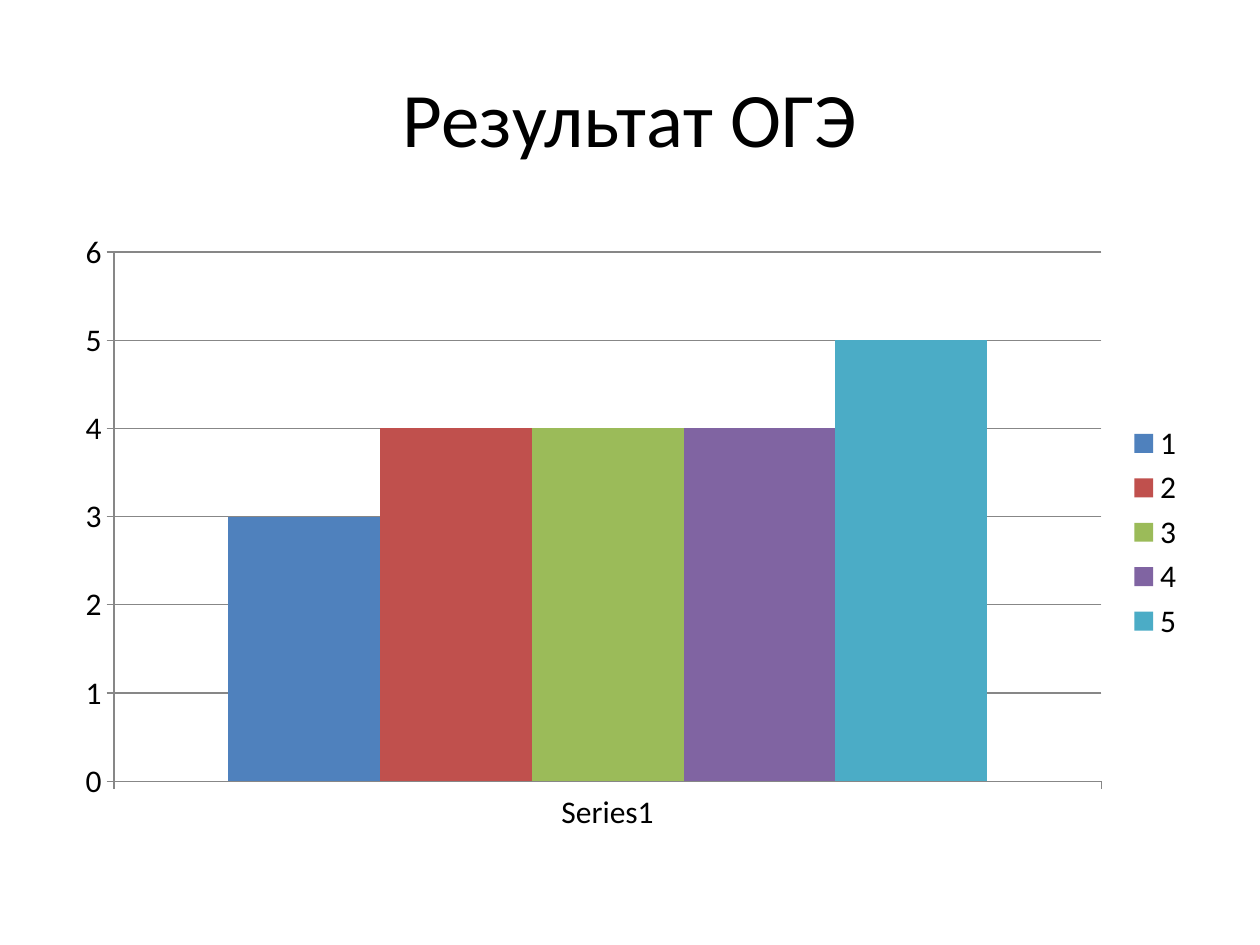
from pptx import Presentation
from pptx.chart.data import CategoryChartData
from pptx.dml.color import RGBColor
from pptx.enum.chart import XL_CHART_TYPE, XL_LEGEND_POSITION, XL_TICK_MARK
from pptx.enum.text import MSO_ANCHOR, PP_ALIGN
from pptx.util import Inches, Pt

COLUMNS = XL_CHART_TYPE.COLUMN_CLUSTERED
RIGHT = XL_LEGEND_POSITION.RIGHT
OUTSIDE = XL_TICK_MARK.OUTSIDE
MIDDLE = MSO_ANCHOR.MIDDLE
CENTER = PP_ALIGN.CENTER

# Content
TITLE = "Результат ОГЭ"
CATEGORY = "Series1"
RESULTS = [  # name, value, colour
    ("1", 3, "4F81BD"),
    ("2", 4, "C0504D"),
    ("3", 4, "9BBB59"),
    ("4", 4, "8064A2"),
    ("5", 5, "4BACC6"),
]
FONT, BLACK, GRAY = "Calibri", "000000", "878787"
LEFT, WIDTH = Inches(0.5), Inches(9)


def color(value):
    return RGBColor.from_string(value)


def format_font(font, size):
    font.name, font.size = FONT, Pt(size)
    font.color.rgb = color(BLACK)


def write_text(box, text, size, align=CENTER, anchor=MIDDLE):
    frame = box.text_frame
    frame.word_wrap = True
    frame.vertical_anchor = anchor
    para = frame.paragraphs[0]
    para.alignment = align
    span = para.add_run()
    span.text = text
    format_font(span.font, size)


def format_line(line):
    line.color.rgb = color(GRAY)
    line.width = Pt(0.75)


def add_results_chart(page):
    data = CategoryChartData()
    data.categories = [CATEGORY]
    for name, value, _ in RESULTS:
        data.add_series(name, [value])
    chart = page.shapes.add_chart(
        COLUMNS, LEFT, Inches(1.75), WIDTH, Inches(4.95), data).chart
    chart.has_title = False
    format_font(chart.font, 18)

    # Columns
    plot = chart.plots[0]
    plot.gap_width = 150
    plot.overlap = 0
    plot.vary_by_categories = False
    for series, (_, _, fill) in zip(plot.series, RESULTS):
        series.format.fill.solid()
        series.format.fill.fore_color.rgb = color(fill)

    # Axes
    for axis in (chart.category_axis, chart.value_axis):
        axis.major_tick_mark = OUTSIDE
        format_line(axis.format.line)
    scale = chart.value_axis
    scale.minimum_scale, scale.maximum_scale, scale.major_unit = 0, 6, 1
    scale.has_major_gridlines = True
    format_line(scale.major_gridlines.format.line)

    # Legend
    chart.has_legend = True
    chart.legend.position = RIGHT
    chart.legend.include_in_layout = False


def main():
    deck = Presentation()
    deck.slide_width, deck.slide_height = Inches(10), Inches(7.5)
    page = deck.slides.add_slide(deck.slide_layouts[5])

    # Title
    title = page.shapes.title
    title.left, title.top = LEFT, Inches(0.3)
    title.width, title.height = WIDTH, Inches(1.25)
    write_text(title, TITLE, 44)

    add_results_chart(page)
    deck.save("out.pptx")


if __name__ == "__main__":
    main()
